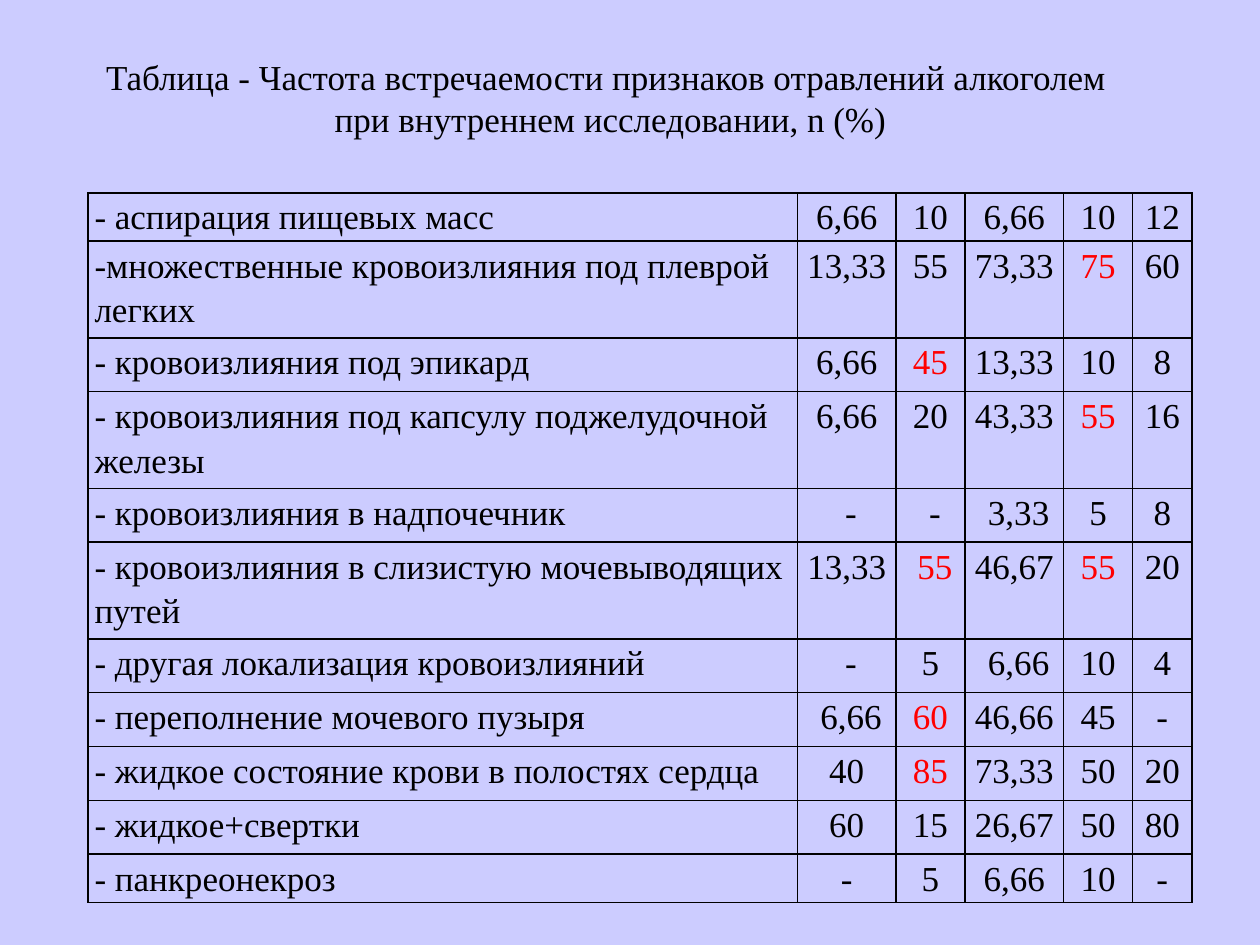
from dataclasses import dataclass

from lxml.etree import SubElement
from pptx import Presentation
from pptx.dml.color import RGBColor
from pptx.enum.text import MSO_ANCHOR, MSO_AUTO_SIZE, PP_ALIGN
from pptx.oxml.ns import qn
from pptx.util import Inches, Pt

COLORS = {"background": "CCCCFF", "text": "000000", "accent": "FF0000"}
FONT = "Times New Roman"
SLIDE_W, SLIDE_H = Inches(10), Inches(7.5)
COLUMN_SHARES = (0.563, 0.078, 0.055, 0.078, 0.055, 0.047)
EDGE_ROW_SHARE, INNER_ROW_SHARE = 0.039, 0.057


@dataclass(frozen=True)
class SignRow:
    label: str
    values: tuple[str, ...]
    red: tuple[int, ...] = ()  # indexes of the highlighted values
    space_after: int = 0


TITLE = (
    "Таблица - Частота встречаемости признаков отравлений алкоголем ",
    "при внутреннем исследовании, n (%)",
)
ROWS = (
    SignRow("- аспирация пищевых масс", ("6,66", "10", "6,66", "10", "12"), space_after=10),
    SignRow("-множественные кровоизлияния под плеврой легких",
            ("13,33", "55", "73,33", "75", "60"), (3,), 10),
    SignRow("- кровоизлияния под эпикард", ("6,66", "45", "13,33", "10", "8"), (1,), 10),
    SignRow("- кровоизлияния под капсулу поджелудочной\nжелезы",
            ("6,66", "20", "43,33", "55", "16"), (3,)),
    SignRow("- кровоизлияния в надпочечник", (" -", " -", " 3,33", "5", "8")),
    SignRow("- кровоизлияния в слизистую мочевыводящих\nпутей",
            ("13,33 ", " 55", "46,67", "55", "20"), (1, 3)),
    SignRow("- другая локализация кровоизлияний", (" -", "5", " 6,66", "10", "4")),
    SignRow("- переполнение мочевого пузыря", (" 6,66", "60", "46,66", "45", "-"), (1,)),
    SignRow("- жидкое состояние крови в полостях сердца",
            ("40", "85", "73,33", "50", "20"), (1,)),
    SignRow("- жидкое+свертки", ("60", "15", "26,67", "50", "80"), space_after=10),
    SignRow("- панкреонекроз", ("-", "5", "6,66", "10", "-"), space_after=10),
)


def across(share: float) -> int:
    return round(SLIDE_W * share)


def down(share: float) -> int:
    return round(SLIDE_H * share)


def write(frame, lines, align, color: str = "text", spacing: float = 1.0, after: int = 0) -> None:
    """Put each line in its own paragraph."""
    for index, line in enumerate(lines):
        para = frame.paragraphs[0] if index == 0 else frame.add_paragraph()
        para.alignment = align
        para.line_spacing = spacing
        para.space_before, para.space_after = Pt(0), Pt(after)
        span = para.add_run()
        span.text = line
        span.font.name, span.font.size = FONT, Pt(20)
        span.font.color.rgb = RGBColor.from_string(COLORS[color])


def add_borders(cell) -> None:
    properties = cell._tc.get_or_add_tcPr()
    for side in ("a:lnL", "a:lnR", "a:lnT", "a:lnB"):
        line = SubElement(properties, qn(side), w=str(Pt(1)))
        fill = SubElement(line, qn("a:solidFill"))
        SubElement(fill, qn("a:srgbClr"), val=COLORS["text"])


def draw_cell(cell, text: str, align, color: str, after: int) -> None:
    cell.margin_left = cell.margin_right = Inches(0.05)
    cell.margin_top = cell.margin_bottom = 0
    cell.vertical_anchor = MSO_ANCHOR.TOP
    add_borders(cell)
    cell.fill.background()
    write(cell.text_frame, text.split("\n"), align, color, 1.15, after)


def draw_title(page) -> None:
    box = page.shapes.title
    box.left, box.top = across(0.055), down(0.052)
    box.width, box.height = across(0.859), down(0.103)
    frame = box.text_frame
    frame.word_wrap = True
    frame.auto_size = MSO_AUTO_SIZE.SHAPE_TO_FIT_TEXT
    frame.vertical_anchor = MSO_ANCHOR.TOP
    write(frame, TITLE, PP_ALIGN.CENTER)


def draw_table(page) -> None:
    heights = [EDGE_ROW_SHARE, *[INNER_ROW_SHARE] * (len(ROWS) - 2), EDGE_ROW_SHARE]
    table = page.shapes.add_table(
        len(ROWS), len(COLUMN_SHARES), across(0.07), down(0.204),
        across(sum(COLUMN_SHARES)), down(sum(heights))).table
    table.first_row = table.horz_banding = False
    for column, share in zip(table.columns, COLUMN_SHARES):
        column.width = across(share)
    for index, (sign, share) in enumerate(zip(ROWS, heights)):
        table.rows[index].height = down(share)
        draw_cell(table.cell(index, 0), sign.label, PP_ALIGN.LEFT, "text", sign.space_after)
        for number, value in enumerate(sign.values):
            color = "accent" if number in sign.red else "text"
            draw_cell(table.cell(index, number + 1), value, PP_ALIGN.CENTER,
                      color, sign.space_after)


def main() -> None:
    deck = Presentation()
    deck.slide_width, deck.slide_height = SLIDE_W, SLIDE_H
    page = deck.slides.add_slide(deck.slide_layouts[5])  # title only
    page.background.fill.solid()
    page.background.fill.fore_color.rgb = RGBColor.from_string(COLORS["background"])
    draw_title(page)
    draw_table(page)
    deck.save("out.pptx")


if __name__ == "__main__":
    main()
